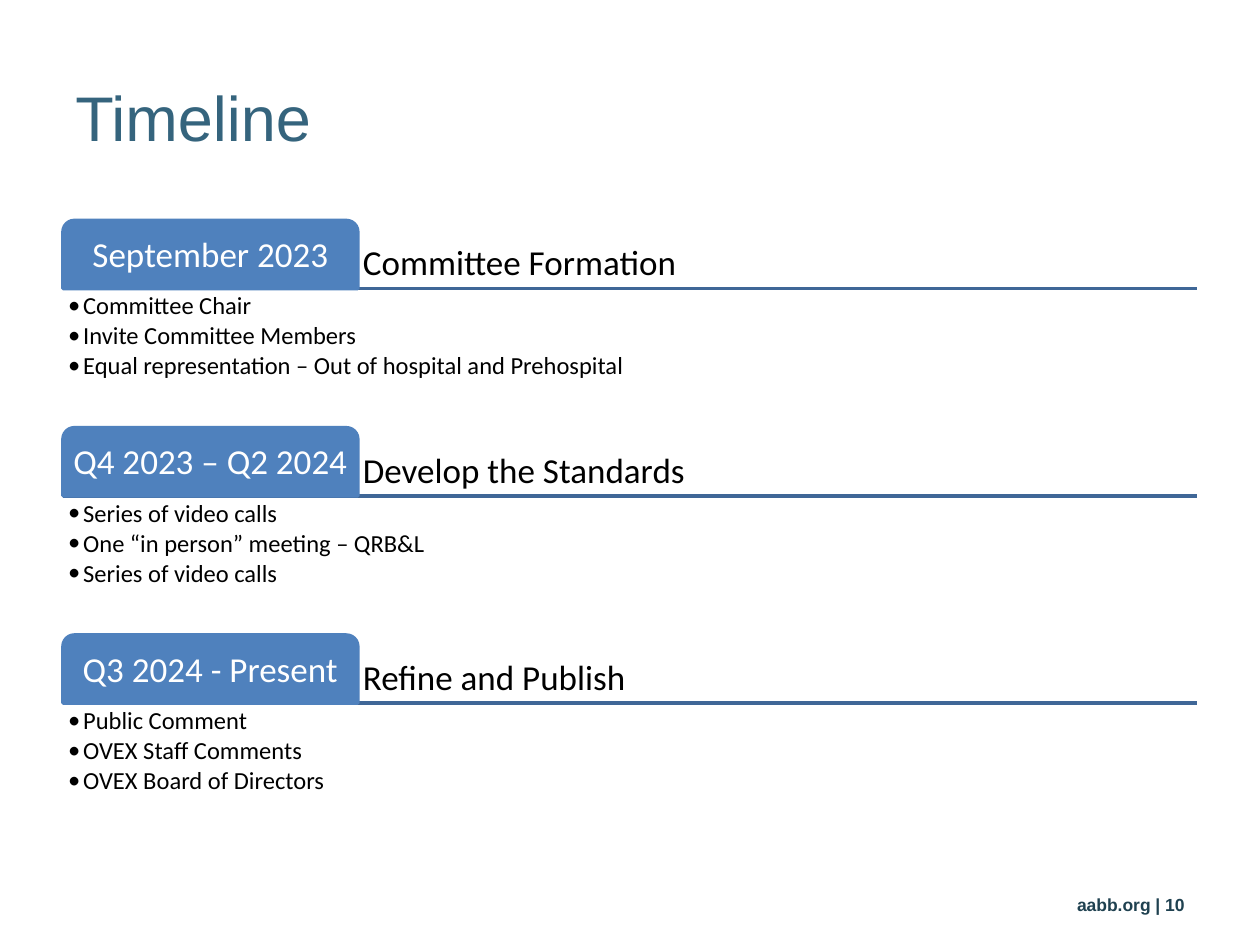
"""Build a timeline slide of three dated stages with their steps."""
from dataclasses import dataclass

from lxml import etree
from pptx import Presentation
from pptx import util as u
from pptx.dml.color import RGBColor
from pptx.enum import shapes, text
from pptx.oxml.ns import qn

TITLE = RGBColor(0x35, 0x64, 0x7D)
FOOT = RGBColor(0x1F, 0x41, 0x50)
RULE = RGBColor(0x3F, 0x67, 0x97)
TAB = RGBColor(0x4F, 0x81, 0xBD)
BLACK = RGBColor(0, 0, 0)
WHITE = RGBColor(255, 255, 255)

WIDE, HIGH = 10, 7.5
LEFT, SPAN = WIDE * 0.05, WIDE * 0.9
TOP, PITCH = 1.75, 3.29 / 2
HEAD, BODY = 0.54, 1.08
TAB_W = SPAN * 0.26
INSET = 0.04
INDENT = 0.12


@dataclass(frozen=True)
class Box:
    """Place of a shape in inches."""
    x: float
    y: float
    w: float
    h: float

    def emu(self) -> list[int]:
        """Return the place as lengths."""
        return [u.Inches(n) for n in (self.x, self.y, self.w, self.h)]


@dataclass(frozen=True)
class Style:
    """Look of a block of text."""
    size: float
    color: RGBColor
    face: str = "Calibri"
    bold: bool = False
    align: text.PP_ALIGN = text.PP_ALIGN.LEFT
    anchor: text.MSO_ANCHOR = text.MSO_ANCHOR.MIDDLE
    inset: float = INSET
    lead: float = 0.9
    after: float = 0
    bullet: bool = False


@dataclass(frozen=True)
class Stage:
    """One dated stage of the timeline."""
    date: str
    name: str
    steps: tuple[str, ...]


STAGES = (
    Stage("September 2023", "Committee Formation",
          ("Committee Chair", "Invite Committee Members",
           "Equal representation – Out of hospital and Prehospital")),
    Stage("Q4 2023 – Q2 2024", "Develop the Standards",
          ("Series of video calls", "One “in person” meeting – QRB&L",
           "Series of video calls")),
    Stage("Q3 2024 - Present", "Refine and Publish",
          ("Public Comment", "OVEX Staff Comments",
           "OVEX Board of Directors")),
)

MAIN = Style(36, TITLE, "Arial", inset=0.1, lead=1)
NOTE = Style(10, FOOT, "Arial", True, text.PP_ALIGN.RIGHT, inset=0.1, lead=1)
DATE = Style(20, WHITE, align=text.PP_ALIGN.CENTER)
NAME = Style(20, BLACK, anchor=text.MSO_ANCHOR.BOTTOM)
STEP = Style(14, BLACK, anchor=text.MSO_ANCHOR.TOP, after=2, bullet=True)


def write(frame, lines: tuple[str, ...], style: Style) -> None:
    """Fill a text frame with styled lines."""
    frame.word_wrap = True
    frame.vertical_anchor = style.anchor
    frame.margin_left = frame.margin_right = u.Inches(style.inset)
    frame.margin_top = frame.margin_bottom = u.Inches(min(style.inset, 0.05))
    for i, line in enumerate(lines):
        para = frame.paragraphs[0] if i == 0 else frame.add_paragraph()
        para.text = line
        para.alignment = style.align
        para.line_spacing = style.lead
        para.space_after = u.Pt(style.after)
        if style.bullet:
            para.level = 1
            props = para._p.get_or_add_pPr()
            props.set("marL", str(u.Inches(INDENT)))
            props.set("indent", str(-u.Inches(INDENT)))
            etree.SubElement(props, qn("a:buFont")).set("typeface", style.face)
            etree.SubElement(props, qn("a:buChar")).set("char", "•")
        font = para.font
        font.name, font.size, font.bold = style.face, u.Pt(style.size), style.bold
        font.color.rgb = style.color


def label(slide, box: Box, lines: tuple[str, ...], style: Style) -> None:
    """Add a text box."""
    write(slide.shapes.add_textbox(*box.emu()).text_frame, lines, style)


def rule(slide, y: float) -> None:
    """Draw the line under a stage heading."""
    line = slide.shapes.add_connector(
        shapes.MSO_CONNECTOR.STRAIGHT, u.Inches(LEFT), u.Inches(y),
        u.Inches(LEFT + SPAN), u.Inches(y))
    line.line.color.rgb = RULE
    line.line.width = u.Pt(2)
    etree.SubElement(line._element.spPr, qn("a:effectLst"))


def tab(slide, box: Box, date: str) -> None:
    """Draw the dated tab of a stage."""
    shape = slide.shapes.add_shape(
        shapes.MSO_SHAPE.ROUND_2_SAME_RECTANGLE, *box.emu())
    shape.adjustments[0], shape.adjustments[1] = 1 / 6, 0
    shape.shadow.inherit = False
    shape.fill.solid()
    shape.fill.fore_color.rgb = TAB
    shape.line.color.rgb = TAB
    shape.line.width = u.Pt(2)
    write(shape.text_frame, (date,), DATE)


def draw(slide, row: int, stage: Stage) -> None:
    """Draw one stage in its row."""
    top = TOP + row * PITCH
    base = top + HEAD
    rule(slide, base)
    label(slide, Box(LEFT + TAB_W, top, SPAN - TAB_W, HEAD), (stage.name,), NAME)
    tab(slide, Box(LEFT, top, TAB_W, HEAD), stage.date)
    label(slide, Box(LEFT, base, SPAN, BODY), stage.steps, STEP)


def main() -> None:
    """Build and save the slide."""
    deck = Presentation()
    deck.slide_width, deck.slide_height = u.Inches(WIDE), u.Inches(HIGH)
    slide = deck.slides.add_slide(deck.slide_layouts[6])
    label(slide, Box(LEFT, HIGH * 0.04, SPAN, 1.25), ("Timeline",), MAIN)
    label(slide, Box(7.17, 7.01, 2.33, 0.34), ("aabb.org | 10",), NOTE)
    for row, stage in enumerate(STAGES):
        draw(slide, row, stage)
    deck.save("out.pptx")


if __name__ == "__main__":
    main()
